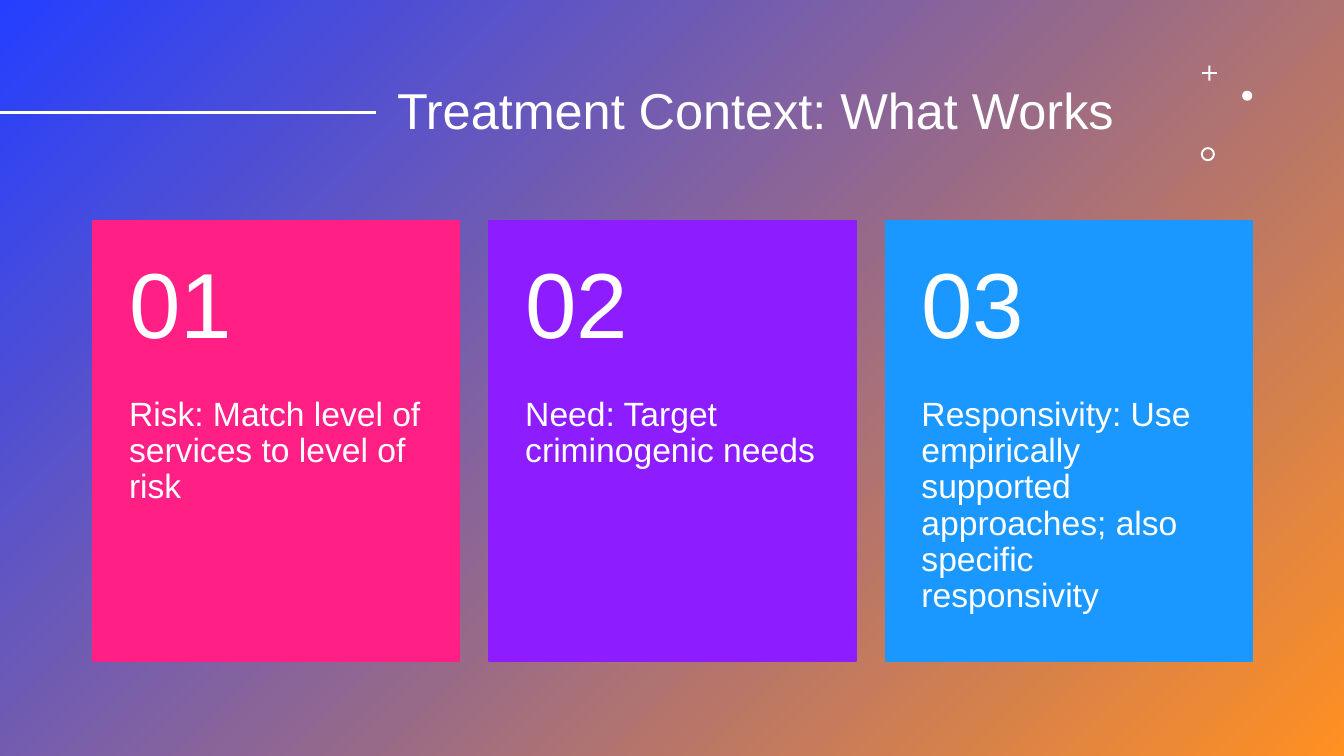
from lxml import etree
from pptx import Presentation
from pptx.dml.color import RGBColor
from pptx.enum import shapes, text
from pptx.oxml import ns
from pptx.util import Inches, Pt

WHITE = "FFFFFF"
CARDS = [
    ("Risk: Match level of services to level of risk", "FF1F85"),
    ("Need: Target criminogenic needs", "8D1DFF"),
    ("Responsivity: Use empirically supported approaches; also specific responsivity", "1A98FF"),
]
CARD_LEFT, CARD_TOP, CARD_WIDTH, CARD_HEIGHT = 0.92, 2.19, 3.64, 4.37
CARD_STEP = 3.93
NUMBER_HEIGHT = 1.75


def color(hex_code):
    return RGBColor.from_string(hex_code)


def add_block(slide, preset, box, fill, outline=None):
    block = slide.shapes.add_shape(preset, *map(Inches, box))
    block.shadow.inherit = False
    block.fill.solid()
    block.fill.fore_color.rgb = color(fill)
    if outline:
        block.line.color.rgb = color(outline)
        block.line.width = Pt(1)
    else:
        block.line.fill.background()
    return block


def add_backdrop(slide, width, height, start, end):
    backdrop = add_block(slide, shapes.MSO_SHAPE.RECTANGLE, (0, 0, width, height), start)
    backdrop.fill.gradient()
    backdrop.fill.gradient_angle = 315
    for stop, hex_code in zip(backdrop.fill.gradient_stops, (start, end)):
        stop.color.rgb = color(hex_code)


def add_text(slide, box, words, size, insets, anchor):
    frame = slide.shapes.add_textbox(*map(Inches, box)).text_frame
    frame.word_wrap = True
    frame.vertical_anchor = anchor
    frame.margin_left, frame.margin_top, frame.margin_right, frame.margin_bottom = map(Inches, insets)
    frame.text = words
    paragraph = frame.paragraphs[0]
    paragraph.line_spacing = 0.9
    font = paragraph.runs[0].font
    font.name = "Arial"
    font.size = Pt(size)
    font.color.rgb = color(WHITE)


def add_rule(slide, x1, x2, y):
    rule = slide.shapes.add_connector(
        shapes.MSO_CONNECTOR.STRAIGHT, Inches(x1), Inches(y), Inches(x2), Inches(y))
    rule.line.color.rgb = color(WHITE)
    rule.line.width = Pt(2)
    etree.SubElement(rule._element.spPr, ns.qn("a:effectLst"))


def add_ornaments(slide):
    plus = add_block(slide, shapes.MSO_SHAPE.CROSS, (11.92, 0.65, 0.15, 0.15), WHITE)
    plus.adjustments[0] = 0.44
    add_block(slide, shapes.MSO_SHAPE.OVAL, (12.32, 0.9, 0.1, 0.1), WHITE)
    ring = add_block(slide, shapes.MSO_SHAPE.DONUT, (11.91, 1.46, 0.14, 0.14), WHITE)
    ring.adjustments[0] = 0.14


def add_card(slide, index, words, fill):
    left = CARD_LEFT + index * CARD_STEP
    add_block(slide, shapes.MSO_SHAPE.RECTANGLE,
              (left, CARD_TOP, CARD_WIDTH, CARD_HEIGHT), fill, fill)
    add_text(slide, (left, CARD_TOP + NUMBER_HEIGHT, CARD_WIDTH, CARD_HEIGHT - NUMBER_HEIGHT),
             words, 24, (0.36, 0, 0.36, 0.36), text.MSO_ANCHOR.TOP)
    add_text(slide, (left, CARD_TOP, CARD_WIDTH, NUMBER_HEIGHT),
             f"{index + 1:02d}", 66, (0.36, 0.18, 0.36, 0.18), text.MSO_ANCHOR.MIDDLE)


def main():
    deck = Presentation()
    deck.slide_width, deck.slide_height = Inches(13.33), Inches(7.5)
    slide = deck.slides.add_slide(deck.slide_layouts[6])
    add_backdrop(slide, 13.33, 7.5, "243FFF", "FF9022")
    add_text(slide, (3.84, 0.4, 7.83, 1.45), "Treatment Context: What Works",
             36, (0.1, 0.05, 0.1, 0.05), text.MSO_ANCHOR.MIDDLE)
    add_rule(slide, 0, 3.73, 1.12)
    add_ornaments(slide)
    for index, (words, fill) in enumerate(CARDS):
        add_card(slide, index, words, fill)
    deck.save("out.pptx")


if __name__ == "__main__":
    main()
